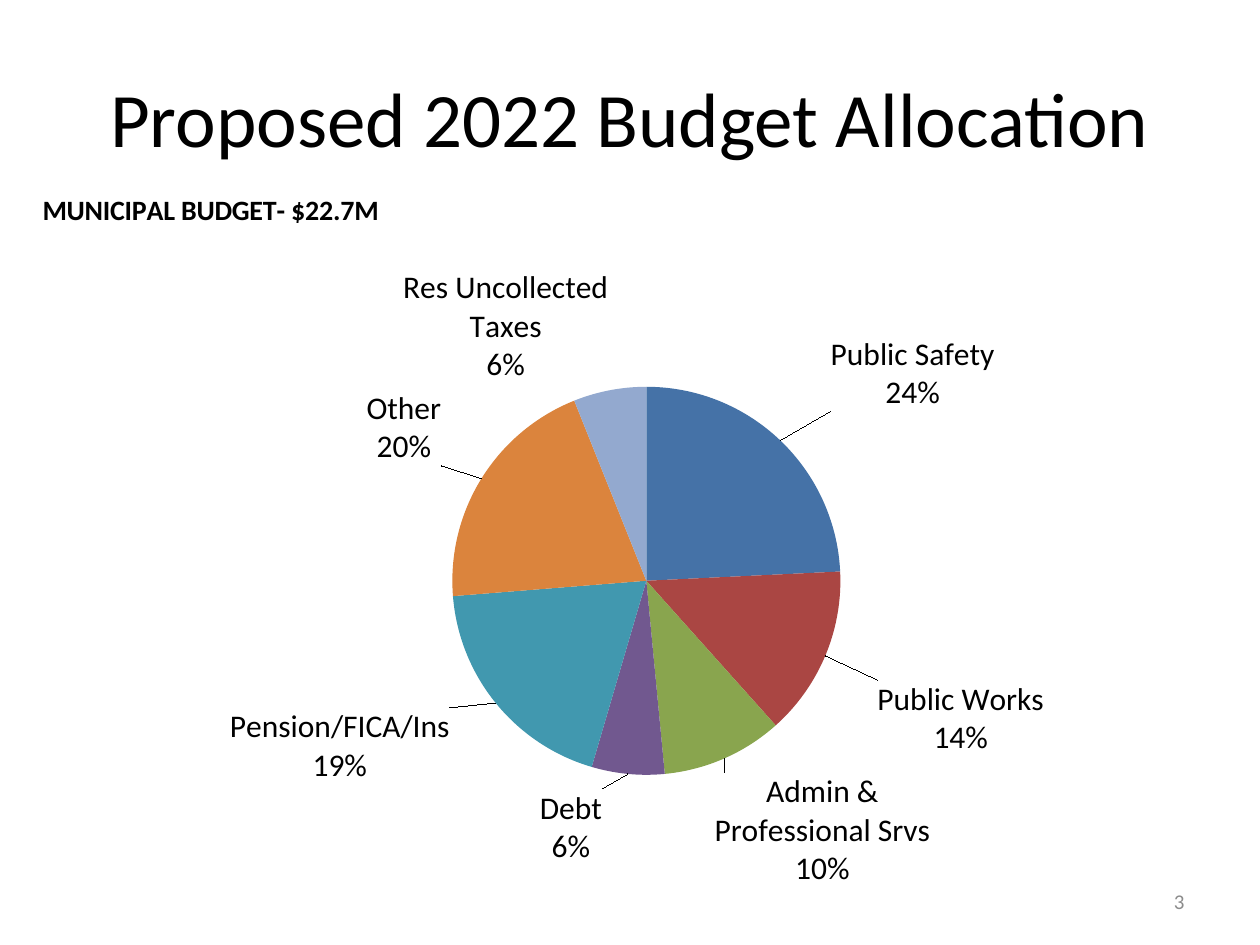
from copy import deepcopy

from pptx import Presentation
from pptx.chart.data import CategoryChartData
from pptx.dml.color import RGBColor
from pptx.enum.chart import XL_CHART_TYPE, XL_LABEL_POSITION
from pptx.enum.text import MSO_ANCHOR, PP_ALIGN
from pptx.oxml import parse_xml
from pptx.oxml.ns import nsdecls, qn
from pptx.util import Inches, Pt

FONT = "Calibri"
# Category, share, slice colour, label shift in inches (None: automatic place)
ALLOCATION = [
    ("Public Safety", 24, "4572A7", (0.36, -0.19)),
    ("Public Works", 14, "AA4643", (0.36, 0.17)),
    ("Admin & Professional Srvs", 10, "89A54E", (-0.1, 0.06)),
    ("Debt", 6, "71588F", (-0.2, 0.06)),
    ("Pension/FICA/Ins", 19, "4198AF", (-0.32, 0)),
    ("Other", 20, "DB843D", (-0.27, -0.07)),
    ("Res Uncollected Taxes", 6, "93A9CF", None),
]


def style_font(font, size, color="000000", bold=False):
    font.name = FONT
    font.size = Pt(size)
    font.bold = bold
    font.color.rgb = RGBColor.from_string(color)


def place(shape, box):
    shape.left, shape.top, shape.width, shape.height = (Inches(n) for n in box)


def manual_layout(x, y, size=None, inner=False, edge=True):
    """Chart layout element; all lengths are fractions of the chart."""
    parts = ['<c:layoutTarget val="inner"/>'] if inner else []
    if edge:
        parts += ['<c:xMode val="edge"/>', '<c:yMode val="edge"/>']
    parts += [f'<c:x val="{x:.4f}"/>', f'<c:y val="{y:.4f}"/>']
    if size:
        parts += [f'<c:w val="{size[0]:.4f}"/>', f'<c:h val="{size[1]:.4f}"/>']
    return parse_xml(f'<c:layout {nsdecls("c")}><c:manualLayout>'
                     f'{"".join(parts)}</c:manualLayout></c:layout>')


def replace_layout(parent, index, layout):
    for old in parent.findall(qn("c:layout")):
        parent.remove(old)
    parent.insert(index, layout)


def add_title(slide, box, text):
    title = slide.shapes.title
    place(title, box)
    frame = title.text_frame
    frame.vertical_anchor = MSO_ANCHOR.MIDDLE
    paragraph = frame.paragraphs[0]
    paragraph.alignment = PP_ALIGN.CENTER
    run = paragraph.add_run()
    run.text = text
    style_font(run.font, 44)


def add_page_number(slide, box, number):
    frame = slide.shapes.add_textbox(*(Inches(n) for n in box)).text_frame
    frame.word_wrap = True
    frame.vertical_anchor = MSO_ANCHOR.MIDDLE
    paragraph = frame.paragraphs[0]
    paragraph.alignment = PP_ALIGN.RIGHT
    run = paragraph.add_run()
    run.text = number
    style_font(run.font, 12, "8C8C8C")


def label_slices(series, width, height):
    labels = series.data_labels
    labels.show_value = False
    labels.show_category_name = True
    labels.show_percentage = True
    labels.number_format = "0%"
    labels.number_format_is_linked = False
    labels.position = XL_LABEL_POSITION.OUTSIDE_END
    style_font(labels.font, 18)

    group = series.data_labels._element
    separator = parse_xml(f'<c:separator {nsdecls("c")}>\n</c:separator>')
    group.find(qn("c:showBubbleSize")).addnext(separator)
    shared = [part for part in group if part.tag != qn("c:showLeaderLines")]
    shifts = [(i, row[3]) for i, row in enumerate(ALLOCATION) if row[3]]
    for position, (index, (dx, dy)) in enumerate(shifts):
        label = parse_xml(f'<c:dLbl {nsdecls("c")}><c:idx val="{index}"/></c:dLbl>')
        label.append(manual_layout(dx / width, dy / height, edge=False))
        label.extend(deepcopy(part) for part in shared)
        group.insert(position, label)


def add_budget_pie(slide, box, heading):
    _, _, width, height = box
    data = CategoryChartData()
    data.categories = [row[0] for row in ALLOCATION]
    data.add_series("Series 1", [row[1] for row in ALLOCATION])
    chart = slide.shapes.add_chart(
        XL_CHART_TYPE.PIE, *(Inches(n) for n in box), data).chart
    chart.has_legend = False
    style_font(chart.font, 18)

    run = chart.chart_title.text_frame.paragraphs[0].add_run()
    run.text = heading
    style_font(run.font, 16, bold=True)
    chart.chart_title.include_in_layout = False
    replace_layout(chart.element.xpath(".//c:title")[0], 1,
                   manual_layout(0.005, 0.01))

    diameter = 3.08
    replace_layout(chart.element.xpath(".//c:plotArea")[0], 0,
                   manual_layout(3.34 / width, 1.65 / height,
                                 (diameter / width, diameter / height), inner=True))

    plot = chart.plots[0]
    plot.vary_by_categories = True
    series = plot.series[0]
    for index, (_, _, color, _) in enumerate(ALLOCATION):
        slice_format = series.points[index].format
        slice_format.fill.solid()
        slice_format.fill.fore_color.rgb = RGBColor.from_string(color)
        slice_format.line.fill.background()
    label_slices(series, width, height)


def main():
    deck = Presentation()
    deck.slide_width, deck.slide_height = Inches(10), Inches(7.5)
    slide = deck.slides.add_slide(deck.slide_layouts[5])
    add_budget_pie(slide, (0.25, 1.42, 9.5, 5.75), "MUNICIPAL BUDGET- $22.7M")
    add_page_number(slide, (7.17, 6.95, 2.33, 0.4), "3")
    add_title(slide, (0.5, 0.3, 9, 1.25), "Proposed 2022 Budget Allocation")
    deck.save("out.pptx")


if __name__ == "__main__":
    main()
